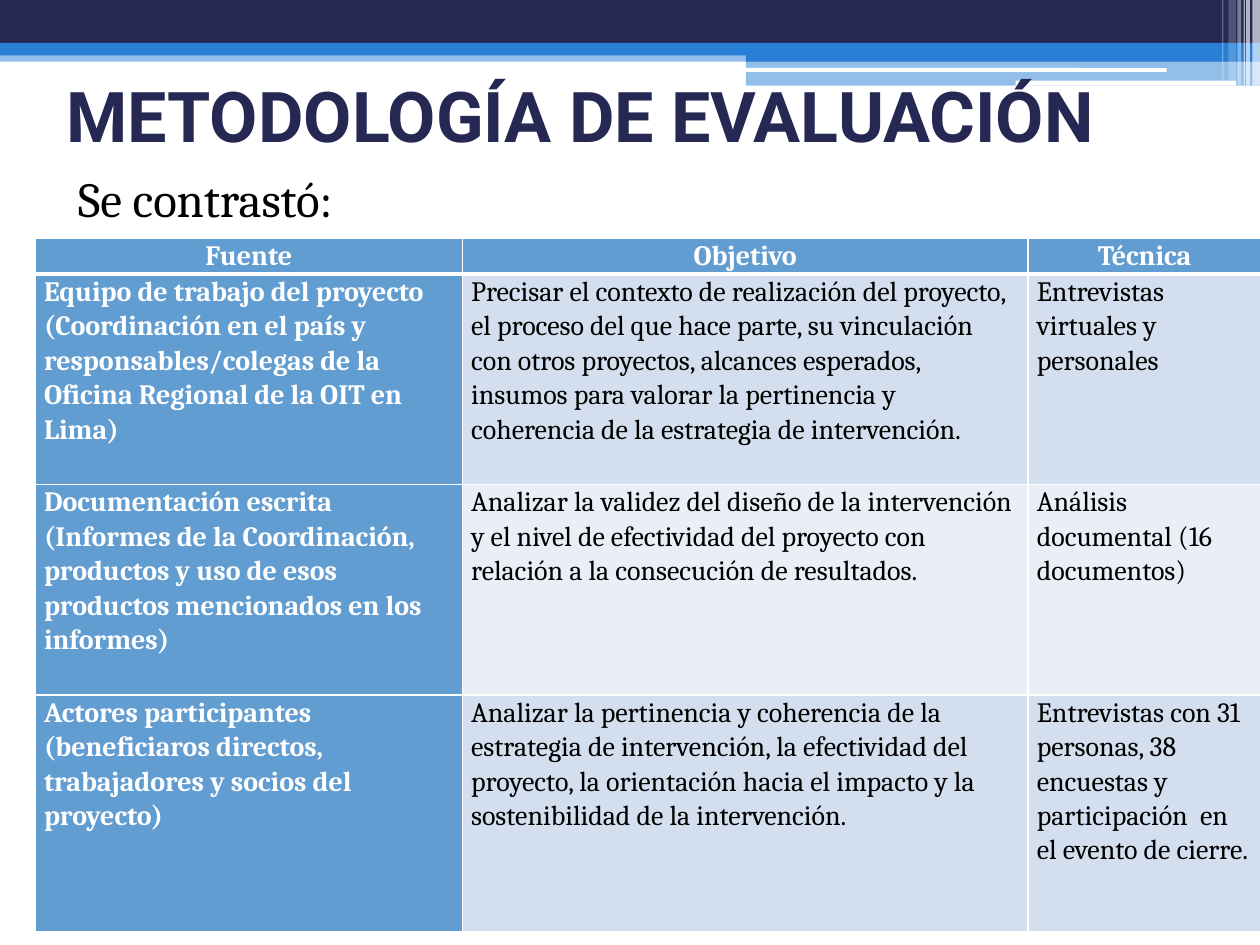
from typing import NamedTuple

from lxml import etree
from pptx import Presentation
from pptx.dml.color import RGBColor
from pptx.enum.shapes import MSO_SHAPE
from pptx.enum.text import MSO_ANCHOR, PP_ALIGN
from pptx.oxml.ns import qn
from pptx.util import Inches, Pt

RECTANGLE = MSO_SHAPE.RECTANGLE
ROUNDED = MSO_SHAPE.ROUNDED_RECTANGLE
CENTER, LEFT = PP_ALIGN.CENTER, PP_ALIGN.LEFT
MIDDLE, TOP = MSO_ANCHOR.MIDDLE, MSO_ANCHOR.TOP

NAVY, BLUE, WHITE, BLACK = "242852", "297FD5", "FFFFFF", "000000"
HEADER, BAND_DARK, BAND_LIGHT = "629DD1", "D3DFEE", "EAEFF7"


class Bar(NamedTuple):
    left: float
    top: float
    width: float
    height: float
    color: str
    opacity: int = 100
    kind: int = RECTANGLE


class TextStyle(NamedTuple):
    font: str
    size: int
    color: str
    bold: bool = False


BARS = [
    # Horizontal bands
    Bar(0, 0.4, 10, 0.09, BLUE, 50),
    Bar(0, 0, 10, 0.34, NAVY),
    Bar(0, 0.34, 10, 0.1, BLUE),
    Bar(5.92, 0.39, 4.08, 0.1, BLUE),
    Bar(5.92, 0.48, 4.08, 0.2, BLUE, 50),
    Bar(5.91, 0.54, 3.35, 0.03, WHITE, kind=ROUNDED),
    Bar(8.06, 0.64, 1.75, 0.04, WHITE, kind=ROUNDED),
    # Vertical stripes at the right edge
    Bar(9.94, 0, 0.06, 0.68, WHITE, 65),
    Bar(9.89, 0, 0.03, 0.68, WHITE, 65),
    Bar(9.87, 0, 0.01, 0.68, WHITE, 60),
    Bar(9.82, 0, 0.03, 0.68, WHITE, 40),
    Bar(9.75, 0, 0.06, 0.64, WHITE, 20),
    Bar(9.7, 0, 0.01, 0.64, WHITE, 30),
]

COLUMN_WIDTHS = [3.39, 4.49, 1.85]
ROW_HEIGHTS = [0.28, 1.67, 1.67, 1.88]
ROWS = [
    ("Fuente", "Objetivo", "Técnica"),
    (
        "Equipo de trabajo del proyecto (Coordinación en el país y "
        "responsables/colegas de la Oficina Regional de la OIT en Lima)",
        "Precisar el contexto de realización del proyecto, el proceso del que "
        "hace parte, su vinculación con otros proyectos, alcances esperados, "
        "insumos para valorar la pertinencia y coherencia de la estrategia de "
        "intervención.",
        "Entrevistas virtuales y personales",
    ),
    (
        "Documentación escrita\n(Informes de la Coordinación, productos y uso "
        "de esos productos mencionados en los informes)",
        "Analizar la validez del diseño de la intervención y el nivel de "
        "efectividad del proyecto con relación a la consecución de resultados.",
        "Análisis documental (16 documentos)",
    ),
    (
        "Actores participantes (beneficiaros directos, trabajadores y socios "
        "del proyecto)",
        "Analizar la pertinencia y coherencia de la estrategia de "
        "intervención, la efectividad del proyecto, la orientación hacia el "
        "impacto y la sostenibilidad de la intervención.",
        "Entrevistas con 31 personas, 38 encuestas y participación  en el "
        "evento de cierre.",
    ),
]


def paint(fill, color: str) -> None:
    fill.solid()
    fill.fore_color.rgb = RGBColor.from_string(color)


def add_span(para, text: str, style: TextStyle) -> None:
    span = para.add_run()
    span.text = text
    span.font.name = style.font
    span.font.size = Pt(style.size)
    span.font.bold = style.bold
    span.font.color.rgb = RGBColor.from_string(style.color)


def add_bar(page, bar: Bar) -> None:
    shape = page.shapes.add_shape(
        bar.kind, Inches(bar.left), Inches(bar.top),
        Inches(bar.width), Inches(bar.height))
    shape.shadow.inherit = False
    shape.line.fill.background()
    paint(shape.fill, bar.color)
    if bar.opacity < 100:
        color = shape.fill._xPr.find(".//" + qn("a:srgbClr"))
        etree.SubElement(color, qn("a:alpha"), val=str(bar.opacity * 1000))


def add_text(page, left: float, top: float, width: float, height: float,
             text: str, style: TextStyle, anchor=TOP, indent: float = 0,
             space_before: float = 0) -> None:
    box = page.shapes.add_textbox(
        Inches(left), Inches(top), Inches(width), Inches(height))
    frame = box.text_frame
    frame.word_wrap = True
    frame.vertical_anchor = anchor
    frame.margin_left = Inches(0.1 + indent)
    para = frame.paragraphs[0]
    para.space_before = Pt(space_before)
    add_span(para, text, style)


def add_borders(cell, widths: dict[str, int]) -> None:
    properties = cell._tc.get_or_add_tcPr()
    for side, width in widths.items():
        line = etree.SubElement(properties, qn(f"a:ln{side}"), w=str(Pt(width)))
        fill = etree.SubElement(line, qn("a:solidFill"))
        etree.SubElement(fill, qn("a:srgbClr"), val=WHITE)


def fill_cell(cell, text: str, row: int, column: int) -> None:
    is_header = row == 0
    is_label = is_header or column == 0
    add_borders(cell, {"L": 1, "R": 1, "T": 3 if row == 1 else 1,
                       "B": 3 if is_header else 1})
    band = BAND_DARK if row % 2 else BAND_LIGHT
    paint(cell.fill, HEADER if is_label else band)
    cell.margin_left = cell.margin_right = Inches(0.07)
    cell.margin_top = cell.margin_bottom = 0
    style = TextStyle("Cambria", 16, WHITE if is_label else BLACK, is_label)
    frame = cell.text_frame
    for index, line in enumerate(text.split("\n")):
        para = frame.add_paragraph() if index else frame.paragraphs[0]
        para.alignment = CENTER if is_header else LEFT
        para.line_spacing = 1.07
        add_span(para, line, style)


def add_sources_table(page) -> None:
    table = page.shapes.add_table(
        len(ROWS), len(COLUMN_WIDTHS), Inches(0.28), Inches(1.89),
        Inches(sum(COLUMN_WIDTHS)), Inches(sum(ROW_HEIGHTS))).table
    for column, width in zip(table.columns, COLUMN_WIDTHS):
        column.width = Inches(width)
    for row, height in zip(table.rows, ROW_HEIGHTS):
        row.height = Inches(height)
    for row, texts in enumerate(ROWS):
        for column, text in enumerate(texts):
            fill_cell(table.cell(row, column), text, row, column)


def main() -> None:
    deck = Presentation()
    deck.slide_width, deck.slide_height = Inches(10), Inches(7.5)
    page = deck.slides.add_slide(deck.slide_layouts[6])
    paint(page.background.fill, WHITE)

    # Header decoration
    for bar in BARS:
        add_bar(page, bar)

    # Title, table and lead-in
    add_text(page, 0.43, 0.44, 9, 0.94, "METODOLOGÍA DE EVALUACIÓN",
             TextStyle("Roboto", 40, NAVY, True), anchor=MIDDLE)
    add_sources_table(page)
    add_text(page, 0.4, 1.29, 4.49, 0.57, "Se contrastó:",
             TextStyle("Cambria", 28, BLACK), indent=0.12, space_before=3)

    deck.save("out.pptx")


if __name__ == "__main__":
    main()
